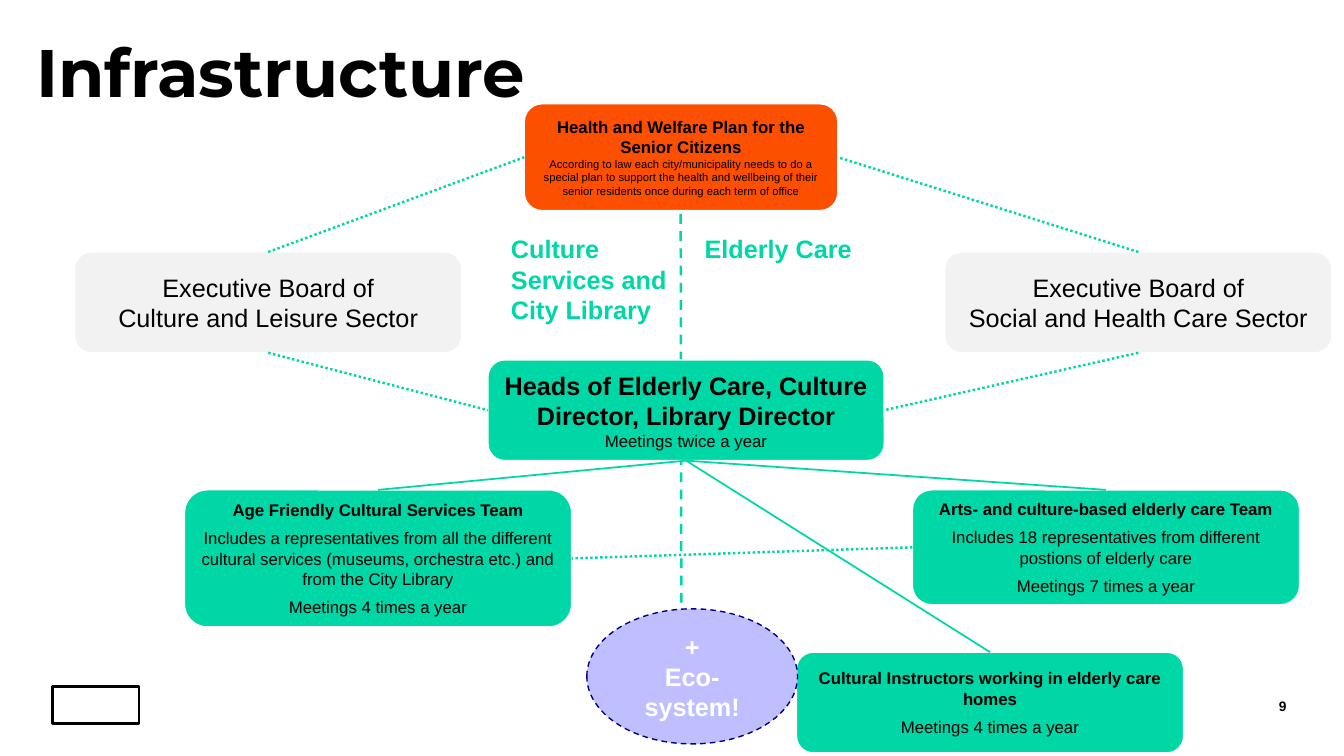
from dataclasses import dataclass

from lxml import etree
from pptx import Presentation
from pptx import util as u
from pptx.dml.color import RGBColor
from pptx.enum import dml, shapes, text
from pptx.oxml import ns

COLORS = {
    "green": "00D7A7",
    "orange": "FC4F00",
    "grey": "F2F2F2",
    "lilac": "BFBFFF",
    "navy": "00008D",
    "white": "FFFFFF",
    "black": "000000",
}
TOP, LEFT, BOTTOM, RIGHT = range(4)
ROUNDED = shapes.MSO_SHAPE.ROUNDED_RECTANGLE
DOTS = dml.MSO_LINE.ROUND_DOT
DASHES = dml.MSO_LINE.DASH
CENTER = text.PP_ALIGN.CENTER


@dataclass(frozen=True)
class Para:
    words: str
    size: float = 12
    bold: bool = False
    before: float = 0


@dataclass(frozen=True)
class Node:
    name: str
    place: tuple[float, float, float, float]
    fill: str
    paras: list[Para]


@dataclass(frozen=True)
class Link:
    start: str
    start_side: int
    end: str
    end_side: int
    dotted: bool = True


def board(sector: str) -> list[Para]:
    return [Para("Executive Board of", 18), Para(sector, 18)]


def team(name: str, *details: str) -> list[Para]:
    return [Para(name, bold=True)] + [Para(line, before=6) for line in details]


NODES = [
    Node("heads", (4.84, 3.57, 3.93, 1), "green", [
        Para("Heads of Elderly Care, Culture Director, Library Director", 18, True),
        Para("Meetings twice a year"),
    ]),
    Node("arts", (9.05, 4.86, 3.84, 1.14), "green", team(
        "Arts- and culture-based elderly care Team",
        "Includes 18 representatives from different postions of elderly care",
        "Meetings 7 times a year",
    )),
    Node("instructors", (7.9, 6.47, 3.84, 1), "green", team(
        "Cultural Instructors working in elderly care homes",
        "Meetings 4 times a year",
    )),
    Node("age friendly", (1.83, 4.86, 3.84, 1.36), "green", team(
        "Age Friendly Cultural Services Team",
        "Includes a representatives from all the different cultural services "
        "(museums, orchestra etc.) and from the City Library",
        "Meetings 4 times a year",
    )),
    Node("health board", (9.37, 2.5, 3.84, 1), "grey", board("Social and Health Care Sector")),
    Node("culture board", (0.74, 2.5, 3.84, 1), "grey", board("Culture and Leisure Sector")),
    Node("plan", (5.2, 1.03, 3.11, 1.06), "orange", [
        Para("Health and Welfare Plan for the Senior Citizens", bold=True),
        Para("According to law each city/municipality needs to do a special plan to "
             "support the health and wellbeing of their senior residents once during "
             "each term of office", 8),
    ]),
]

LINKS = [
    Link("culture board", TOP, "plan", LEFT),
    Link("health board", TOP, "plan", RIGHT),
    Link("culture board", BOTTOM, "heads", LEFT),
    Link("health board", BOTTOM, "heads", RIGHT),
    Link("arts", LEFT, "age friendly", RIGHT),
    Link("age friendly", TOP, "heads", BOTTOM, dotted=False),
    Link("arts", TOP, "heads", BOTTOM, dotted=False),
    Link("instructors", TOP, "heads", BOTTOM, dotted=False),
]


def rgb(name: str) -> RGBColor:
    return RGBColor.from_string(COLORS[name])


def write(box, paras: list[Para], *, color="black", font="Arial", align=text.PP_ALIGN.LEFT,
          anchor=text.MSO_ANCHOR.TOP, inset=True, line_spacing=None) -> None:
    frame = box.text_frame
    frame.word_wrap = True
    frame.vertical_anchor = anchor
    if not inset:
        frame.margin_left = frame.margin_right = frame.margin_top = frame.margin_bottom = 0
    for index, item in enumerate(paras):
        para = frame.paragraphs[0] if index == 0 else frame.add_paragraph()
        para.alignment = align
        para.space_before = u.Pt(item.before)
        if line_spacing:
            para.line_spacing = line_spacing
        span = para.add_run()
        span.text = item.words
        span.font.name = font
        span.font.size = u.Pt(item.size)
        span.font.bold = item.bold
        span.font.color.rgb = rgb(color)


def add_label(page, place: tuple, paras: list[Para], **style) -> None:
    write(page.shapes.add_textbox(*map(u.Inches, place)), paras, **style)


def add_box(page, kind, place: tuple, fill: str, outline: str, width: float = 1):
    box = page.shapes.add_shape(kind, *map(u.Inches, place))
    box.shadow.inherit = False
    box.fill.solid()
    box.fill.fore_color.rgb = rgb(fill)
    box.line.color.rgb = rgb(outline)
    box.line.width = u.Pt(width)
    return box


def add_line(page, ends=(0, 0, 0, 0), width: float = 1.75, dash=None):
    line = page.shapes.add_connector(shapes.MSO_CONNECTOR.STRAIGHT, *map(u.Inches, ends))
    line.line.color.rgb = rgb("green")
    line.line.width = u.Pt(width)
    if dash:
        line.line.dash_style = dash
    etree.SubElement(line._element.spPr, ns.qn("a:effectLst"))
    return line


def main() -> None:
    deck = Presentation()
    deck.slide_width, deck.slide_height = u.Inches(13.33), u.Inches(7.5)
    page = deck.slides.add_slide(deck.slide_layouts[6])

    add_box(page, shapes.MSO_SHAPE.RECTANGLE, (0.52, 6.81, 0.86, 0.37), "white", "black", 2)
    add_label(page, (11.41, 6.86, 1.35, 0.28), [Para("9", 9.8, True)],
              align=text.PP_ALIGN.RIGHT, anchor=text.MSO_ANCHOR.MIDDLE, inset=False)
    add_label(page, (0.36, 0.39, 5.82, 0.86), [Para("Infrastructure", 48, True)],
              font="Montserrat", inset=False, line_spacing=0.9)

    add_line(page, (6.75, 1.61, 6.76, 7.15), dash=DASHES)
    boxes = {}
    for node in NODES:
        box = add_box(page, ROUNDED, node.place, node.fill, "white")
        write(box, node.paras, align=CENTER, anchor=text.MSO_ANCHOR.MIDDLE)
        boxes[node.name] = box

    for link in LINKS:
        line = add_line(page, width=1.75 if link.dotted else 1.25,
                        dash=DOTS if link.dotted else None)
        line.begin_connect(boxes[link.start], link.start_side)
        line.end_connect(boxes[link.end], link.end_side)

    add_label(page, (4.97, 2.27, 1.84, 1.01),
              [Para("Culture Services and City Library", 18, True)], color="green")
    add_label(page, (6.89, 2.27, 1.71, 0.4), [Para("Elderly Care", 18, True)], color="green")

    ecosystem = add_box(page, shapes.MSO_SHAPE.OVAL, (5.82, 6.04, 2.09, 1.34), "lilac", "navy")
    ecosystem.line.dash_style = DASHES
    write(ecosystem, [Para(words, 18, True) for words in ("+", "Eco-", "system!")],
          color="white", align=CENTER, anchor=text.MSO_ANCHOR.MIDDLE)

    deck.save("out.pptx")


if __name__ == "__main__":
    main()
